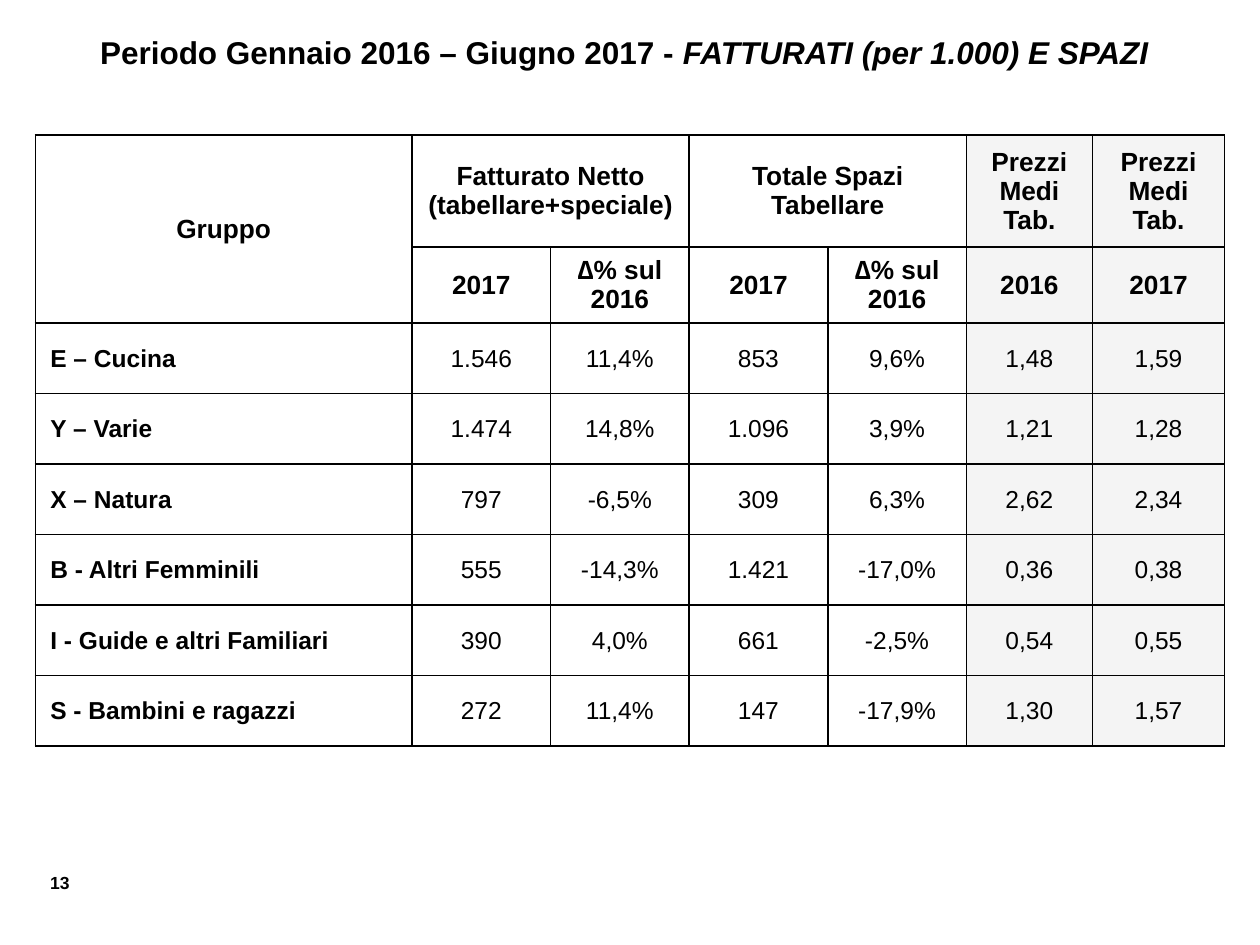
import pptx
import pptx.dml.color
import pptx.enum.text
import pptx.oxml
import pptx.oxml.ns
import pptx.util

COLORS = {"ink": "000000", "shade": "F2F2F2"}
WIDTH, HEIGHT = 10, 7.5
COLUMNS = [2.99] + [1.1] * 4 + [1, 1.05]
ROWS = [0.89, 0.6] + [0.56] * 6
FIRST_PRICE_COLUMN = 5
HEADER_ROWS = 2

HEADINGS = [
    ["Gruppo", "Fatturato Netto (tabellare+speciale)", "",
     "Totale Spazi Tabellare", "", "Prezzi Medi Tab.", "Prezzi Medi Tab."],
    ["", "2017", "∆% sul 2016", "2017", "∆% sul 2016", "2016", "2017"],
]
GROUPS = [
    ["E – Cucina", "1.546", "11,4%", "853", "9,6%", "1,48", "1,59"],
    ["Y – Varie", "1.474", "14,8%", "1.096", "3,9%", "1,21", "1,28"],
    ["X – Natura", "797", "-6,5%", "309", "6,3%", "2,62", "2,34"],
    ["B - Altri Femminili", "555", "-14,3%", "1.421", "-17,0%", "0,36", "0,38"],
    ["I - Guide e altri Familiari", "390", "4,0%", "661", "-2,5%", "0,54", "0,55"],
    ["S - Bambini e ragazzi", "272", "11,4%", "147", "-17,9%", "1,30", "1,57"],
]
MERGES = [((0, 0), (1, 0)), ((0, 1), (0, 2)), ((0, 3), (0, 4))]
ALIGN = pptx.enum.text.PP_ALIGN


def set_attributes(target, values):
    for name, value in values.items():
        setattr(target, name, value)


def add_run(p, text, size, bold=True, italic=False):
    r = p.add_run()
    r.text = text
    set_attributes(r.font, {"name": "Arial", "size": pptx.util.Pt(size),
                            "bold": bold, "italic": italic})
    r.font.color.rgb = pptx.dml.color.RGBColor.from_string(COLORS["ink"])


def add_text(s, box, runs, size, align):
    """Box is left, top, width and height as shares of the slide."""
    scale = (WIDTH, HEIGHT, WIDTH, HEIGHT)
    sp = s.shapes.add_textbox(*(pptx.util.Inches(a * b) for a, b in zip(box, scale)))
    tf = sp.text_frame
    tf.word_wrap = True
    p = tf.paragraphs[0]
    p.alignment = align
    for text, italic in runs:
        add_run(p, text, size, italic=italic)


def add_borders(cell):
    tc_pr = cell._tc.get_or_add_tcPr()
    for i, side in enumerate(("lnL", "lnR", "lnT", "lnB")):
        tc_pr.insert(i, pptx.oxml.parse_xml(
            f'<a:{side} {pptx.oxml.ns.nsdecls("a")} w="12700"><a:solidFill>'
            f'<a:srgbClr val="{COLORS["ink"]}"/></a:solidFill></a:{side}>'))


def fill_cell(cell, shaded):
    """Shade price cells at 80% opacity and clear all others."""
    if not shaded:
        cell.fill.background()
        return
    cell.fill.solid()
    cell.fill.fore_color.rgb = pptx.dml.color.RGBColor.from_string(COLORS["shade"])
    color = cell._tc.tcPr.find(".//" + pptx.oxml.ns.qn("a:srgbClr"))
    color.append(pptx.oxml.parse_xml(
        f'<a:alpha {pptx.oxml.ns.nsdecls("a")} val="80000"/>'))


def format_cell(cell, text, row, column):
    header, label = row < HEADER_ROWS, column == 0
    if header:
        margins = (0.1, 0.05, 0.1, 0.05)
    else:
        margins = (0.12 if label else 0.01, 0.01, 0.01, 0)
    sides = ("margin_left", "margin_top", "margin_right", "margin_bottom")
    set_attributes(cell, dict(zip(sides, map(pptx.util.Inches, margins))))
    cell.vertical_anchor = pptx.enum.text.MSO_ANCHOR.MIDDLE
    fill_cell(cell, column >= FIRST_PRICE_COLUMN)
    add_borders(cell)
    if text:
        p = cell.text_frame.paragraphs[0]
        p.alignment = ALIGN.LEFT if label and not header else ALIGN.CENTER
        add_run(p, text, 15 if header else 14, bold=header or label)


def add_sales_table(s, left, top):
    box = (WIDTH * left, HEIGHT * top, sum(COLUMNS), sum(ROWS))
    table = s.shapes.add_table(len(ROWS), len(COLUMNS),
                               *map(pptx.util.Inches, box)).table
    set_attributes(table, {"first_row": False, "horz_banding": False})
    for column, width in zip(table.columns, COLUMNS):
        column.width = pptx.util.Inches(width)
    for row, height in zip(table.rows, ROWS):
        row.height = pptx.util.Inches(height)
    for start, end in MERGES:
        table.cell(*start).merge(table.cell(*end))
    for i, texts in enumerate(HEADINGS + GROUPS):
        for j, text in enumerate(texts):
            format_cell(table.cell(i, j), text, i, j)


def main():
    prs = pptx.Presentation()
    set_attributes(prs, {"slide_width": pptx.util.Inches(WIDTH),
                         "slide_height": pptx.util.Inches(HEIGHT)})
    s = prs.slides.add_slide(prs.slide_layouts[6])
    add_text(s, (0.019, 0.916, 0.046, 0.036), [("13", False)], 10, ALIGN.RIGHT)
    add_text(s, (0.027, 0.028, 0.937, 0.095),
             [("Periodo Gennaio 2016 – Giugno 2017 - ", False),
              ("FATTURATI (per 1.000) E SPAZI", True)], 18, ALIGN.CENTER)
    add_sales_table(s, 0.028, 0.143)
    prs.save("out.pptx")


if __name__ == "__main__":
    main()
